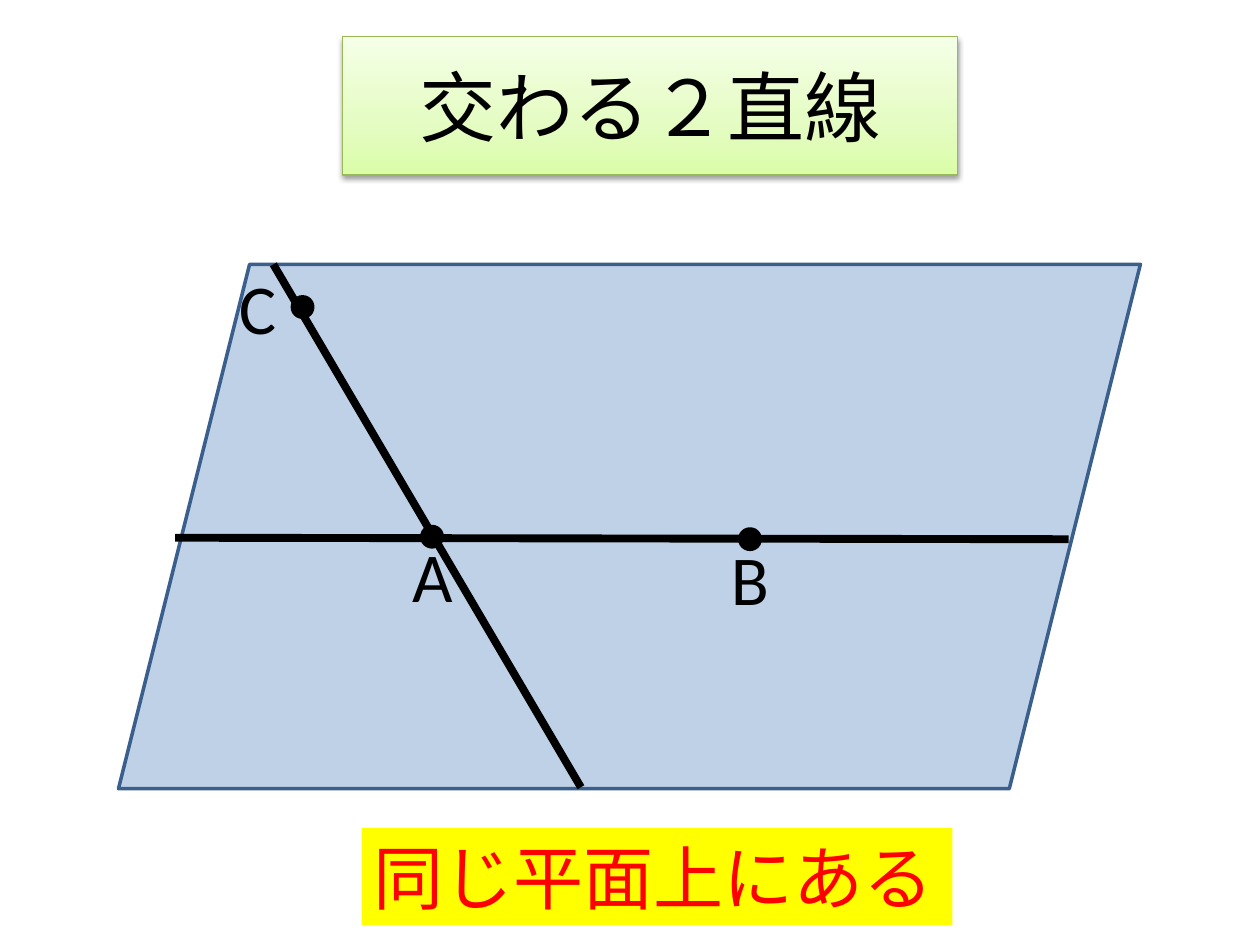
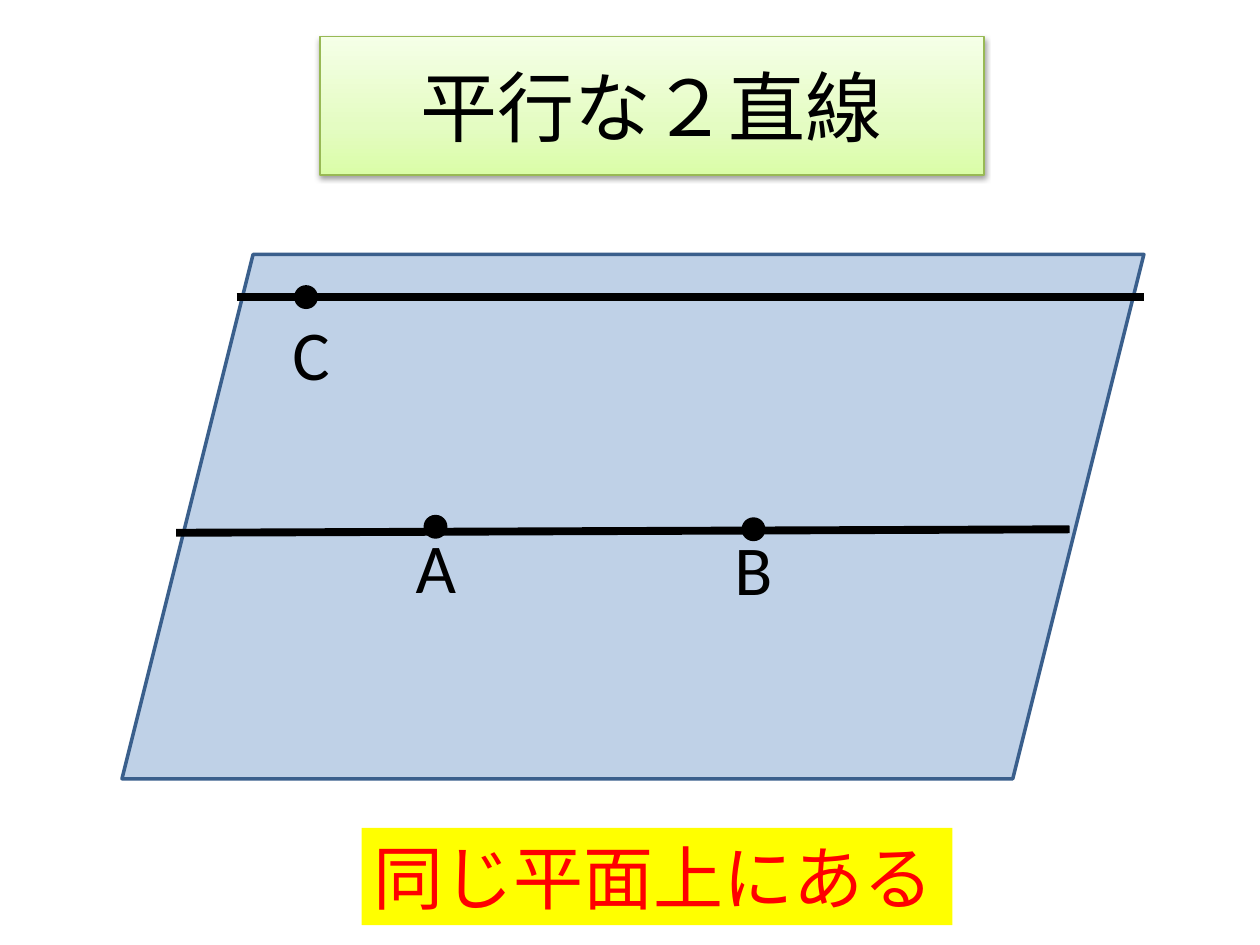
from copy import deepcopy

from lxml.etree import SubElement
from pptx import Presentation
from pptx.dml.color import RGBColor
from pptx.enum.shapes import MSO_CONNECTOR, MSO_SHAPE
from pptx.enum.text import MSO_ANCHOR, PP_ALIGN
from pptx.oxml.ns import qn
from pptx.util import Cm, Pt

FONT = "Calibri"
BLACK = "000000"
RED = "FF0000"
YELLOW = "FFFF00"
PLANE_FILL, PLANE_EDGE = "4F81BD", "3A5F8C"
TITLE_EDGE = "98B955"
TITLE_STOPS = [(0, "DAFDA7"), (0.35, "E4FCC2"), (1, "F5FFE7")]

PLANE_SIZE = (20.6, 10.57)
CAPTION_BOX = (7.29, 16.69, 11.91, 1.96)
DOT = 0.41
LABEL_SIZE = (1.3, 1.96)
POINTS = {"A": (6.32, 5.49), "B": (12.73, 5.54), "C": (3.71, 0.86)}
BELOW_DOT = (0, -0.2)

SLIDES = [
    {
        "title": "交わる２直線",
        "title_box": (6.91, 0.74, 12.4, 2.79),
        "plane_at": (2.39, 5.33),
        "c_offset": (-0.91, -0.99),
        "lines": [((3.12, 0), (9.32, 10.54)), ((1.14, 5.51), (19.15, 5.54))],
    },
    {
        "title": "平行な２直線",
        "title_box": (6.45, 0.74, 13.39, 2.79),
        "plane_at": (2.46, 5.13),
        "c_offset": (0.1, 0.15),
        "lines": [((2.31, 0.86), (20.6, 0.86)), ((1.09, 5.61), (19.1, 5.54))],
    },
]


def rgb(color):
    """Turn a hex string into a colour."""
    return RGBColor.from_string(color)


def lengths(values):
    """Turn centimetres into slide lengths."""
    return [Cm(value) for value in values]


def write(shape, text, size, color, align, wrap=True):
    """Put one paragraph of text into a shape."""
    frame = shape.text_frame
    frame.word_wrap = wrap
    paragraph = frame.paragraphs[0]
    paragraph.text = text
    paragraph.alignment = align
    paragraph.font.name = FONT
    paragraph.font.size = Pt(size)
    paragraph.font.color.rgb = rgb(color)


def add_solid(slide, preset, box, fill, edge=None, width=2):
    """Add a flat preset shape, with an outline if an edge colour is given."""
    shape = slide.shapes.add_shape(preset, *lengths(box))
    shape.shadow.inherit = False
    shape.fill.solid()
    shape.fill.fore_color.rgb = rgb(fill)
    if edge:
        shape.line.color.rgb = rgb(edge)
        shape.line.width = Pt(width)
    else:
        shape.line.fill.background()
    return shape


def add_alpha(color_element, percent):
    """Make a colour element partly transparent."""
    SubElement(color_element, qn("a:alpha"), val=str(percent * 1000))


def add_title(slide, text, box):
    """Add the green gradient title panel with its soft shadow."""
    panel = add_solid(slide, MSO_SHAPE.RECTANGLE, box, YELLOW, TITLE_EDGE, 0.75)
    panel.fill.gradient()
    panel.fill.gradient_angle = 90
    properties = panel.element.spPr
    stop_list = properties.find(".//" + qn("a:gsLst"))
    stop_list.insert(1, deepcopy(stop_list[0]))
    for stop, (position, color) in zip(panel.fill.gradient_stops, TITLE_STOPS):
        stop.position = position
        stop.color.rgb = rgb(color)
    shadow = SubElement(
        properties.find(qn("a:effectLst")), qn("a:outerShdw"),
        blurRad="40000", dist="20000", dir="5400000", rotWithShape="0",
    )
    add_alpha(SubElement(shadow, qn("a:srgbClr"), val=BLACK), 38)
    panel.text_frame.vertical_anchor = MSO_ANCHOR.MIDDLE
    write(panel, text, 44, BLACK, PP_ALIGN.CENTER)


def add_line(slide, start, end):
    """Add one thick black straight line."""
    line = slide.shapes.add_connector(
        MSO_CONNECTOR.STRAIGHT, *lengths(start), *lengths(end))
    line.line.color.rgb = rgb(BLACK)
    line.line.width = Pt(4.5)
    SubElement(line.element.spPr, qn("a:effectLst"))


def add_label(slide, name, x, y):
    """Add a point's letter centred on x with its box top at y."""
    width, height = LABEL_SIZE
    label = slide.shapes.add_textbox(*lengths((x - width / 2, y, width, height)))
    write(label, name, 40, BLACK, PP_ALIGN.CENTER, wrap=False)


def add_plane(slide, origin, lines, c_offset):
    """Add the plane with its points, letters and two lines."""
    left, top = origin
    plane = add_solid(slide, MSO_SHAPE.PARALLELOGRAM, (*origin, *PLANE_SIZE),
                      PLANE_FILL, PLANE_EDGE)
    add_alpha(plane.element.spPr.find(qn("a:solidFill"))[0], 36)
    for name, (x, y) in POINTS.items():
        x, y = left + x, top + y
        add_solid(slide, MSO_SHAPE.FLOWCHART_CONNECTOR,
                  (x - DOT / 2, y - DOT / 2, DOT, DOT), BLACK, BLACK)
        dx, dy = c_offset if name == "C" else BELOW_DOT
        add_label(slide, name, x + dx, y + dy)
    for ends in lines:
        add_line(slide, *((left + x, top + y) for x, y in ends))


def add_caption(slide):
    """Add the yellow conclusion band."""
    band = add_solid(slide, MSO_SHAPE.RECTANGLE, CAPTION_BOX, YELLOW)
    band.text_frame.vertical_anchor = MSO_ANCHOR.TOP
    write(band, "同じ平面上にある", 40, RED, PP_ALIGN.LEFT)


def main():
    """Build and save the presentation."""
    presentation = Presentation()
    presentation.slide_width, presentation.slide_height = Cm(25.4), Cm(19.05)
    for content in SLIDES:
        slide = presentation.slides.add_slide(presentation.slide_layouts[6])
        add_title(slide, content["title"], content["title_box"])
        add_plane(slide, content["plane_at"], content["lines"], content["c_offset"])
        add_caption(slide)
    presentation.save("out.pptx")


if __name__ == "__main__":
    main()
